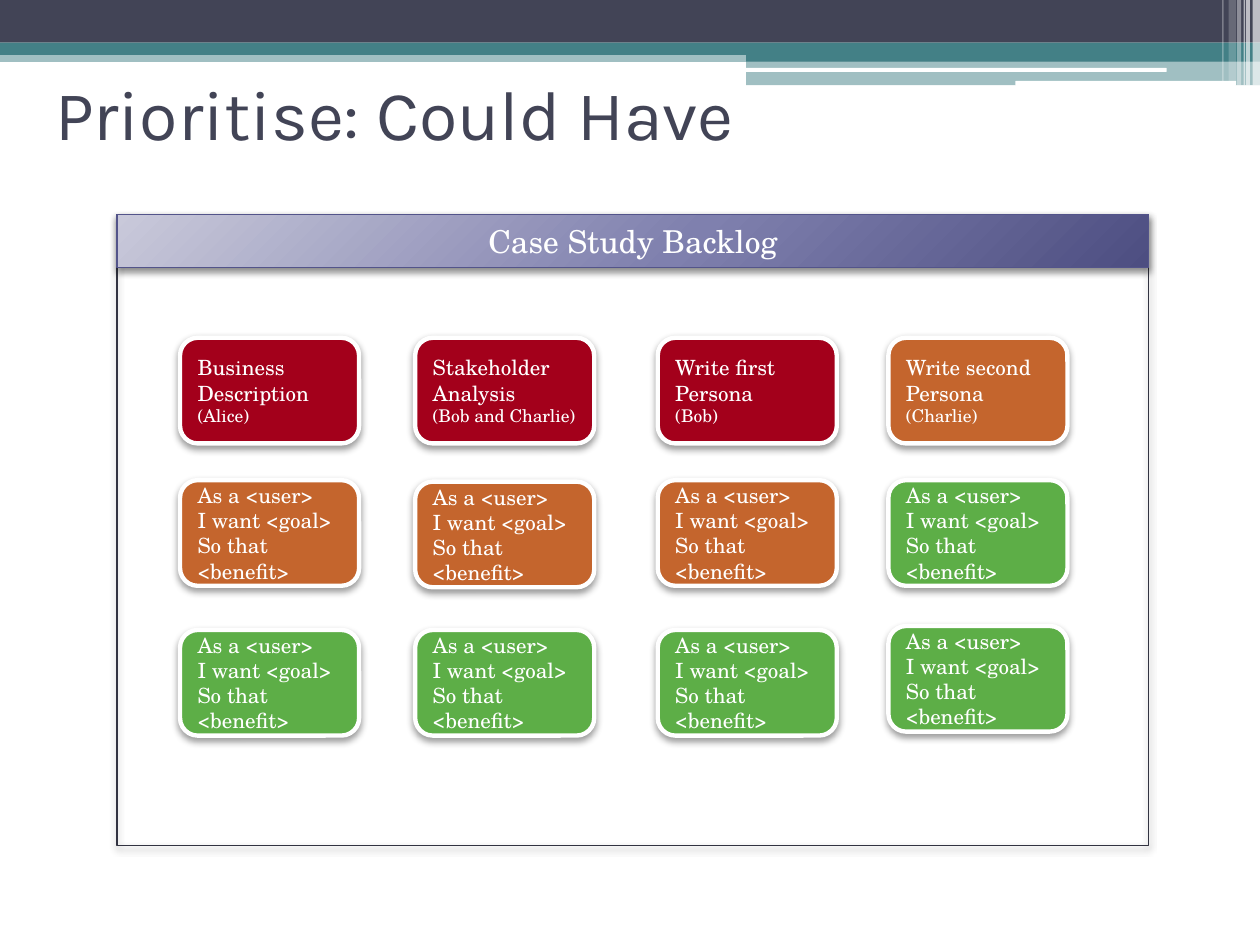
from lxml import etree
from pptx import Presentation
from pptx.dml.color import RGBColor
from pptx.enum.shapes import MSO_SHAPE as Shape
from pptx.enum.text import MSO_ANCHOR as Anchor, PP_ALIGN as Align
from pptx.oxml import parse_xml
from pptx.oxml.ns import nsdecls, qn
from pptx.util import Cm, Pt

WHITE = RGBColor(0xFF, 0xFF, 0xFF)
NAVY = RGBColor(0x42, 0x44, 0x56)
TEAL = RGBColor(0x43, 0x80, 0x86)
FRAME_LINE = RGBColor(0x32, 0x33, 0x41)
HEADER_LINE = RGBColor(0x53, 0x54, 0x8A)
RED = RGBColor(0xA3, 0x00, 0x1B)
ORANGE = RGBColor(0xC4, 0x65, 0x2D)
GREEN = RGBColor(0x5D, 0xAE, 0x47)
HEADER_STOPS = [
    (0, RGBColor(0xC9, 0xC9, 0xDA)),
    (55, RGBColor(0x7F, 0x80, 0xAE)),
    (100, RGBColor(0x4D, 0x4E, 0x81)),
]

TITLE_FONT = "Karla"
BODY_FONT = "TeX Gyre Schola"

BANDS = [
    (0, 1.02, 25.4, 0.23, TEAL, 50),
    (0, 0, 25.4, 0.86, NAVY, 100),
    (0, 0.86, 25.4, 0.25, TEAL, 100),
    (15.04, 0.99, 10.36, 0.25, TEAL, 100),
    (15.04, 1.22, 10.36, 0.5, TEAL, 50),
]
HIGHLIGHTS = [(15.01, 1.37, 8.51, 0.08), (20.47, 1.63, 4.45, 0.1)]
STRIPES = [
    (25.25, 0.15, 1.73, 65),
    (25.12, 0.08, 1.73, 65),
    (25.07, 0.03, 1.73, 60),
    (24.94, 0.08, 1.73, 40),
    (24.77, 0.15, 1.63, 20),
    (24.64, 0.03, 1.63, 30),
]

FRAME_LEFT, FRAME_TOP, FRAME_WIDTH = 2.36, 4.32, 20.8
CARD_WIDTH, CARD_HEIGHT = 3.61, 2.13
COLUMN_LEFTS = [3.63, 8.37, 13.26, 17.91]
ROW_TOPS = [6.81, 9.68, 12.7]
NUDGES = {(1, 1): 0.03, (2, 3): -0.08}
STORY = [("As a <user>", 12), ("I want <goal>", 12), ("So that <benefit>", 12)]


def task(name, owner):
    return [(name, 12), (f"({owner})", 10)]


CARDS = [
    [
        (RED, task("Business Description", "Alice")),
        (RED, task("Stakeholder Analysis", "Bob and Charlie")),
        (RED, task("Write first Persona", "Bob")),
        (ORANGE, task("Write second Persona", "Charlie")),
    ],
    [(color, STORY) for color in (ORANGE, ORANGE, ORANGE, GREEN)],
    [(GREEN, STORY)] * 4,
]


def add_box(slide, kind, left, top, width, height, fill=None, opacity=100):
    shape = slide.shapes.add_shape(kind, Cm(left), Cm(top), Cm(width), Cm(height))
    shape.shadow.inherit = False
    shape.line.fill.background()
    if fill is None:
        shape.fill.background()
    else:
        shape.fill.solid()
        shape.fill.fore_color.rgb = fill
    if opacity < 100:
        color = shape.fill._xPr.find(qn("a:solidFill"))[0]
        etree.SubElement(color, qn("a:alpha"), val=str(opacity * 1000))
    return shape


def set_outline(shape, color, width):
    shape.line.color.rgb = color
    shape.line.width = Pt(width)


def set_shadow(shape, blur, opacity):
    effects = shape._element.spPr.find(qn("a:effectLst"))
    effects.append(parse_xml(
        f'<a:outerShdw {nsdecls("a")} blurRad="{Pt(blur)}" dist="{Pt(2)}" '
        f'dir="5400000" rotWithShape="0"><a:srgbClr val="000000">'
        f'<a:alpha val="{opacity * 1000}"/></a:srgbClr></a:outerShdw>'
    ))


def set_radial_fill(shape, stops):
    stop_xml = "".join(
        f'<a:gs pos="{position * 1000}"><a:srgbClr val="{color}"/></a:gs>'
        for position, color in stops
    )
    gradient = parse_xml(
        f'<a:gradFill {nsdecls("a")} rotWithShape="1"><a:gsLst>{stop_xml}</a:gsLst>'
        '<a:path path="circle"><a:fillToRect l="-40000" t="-90000" '
        'r="140000" b="190000"/></a:path></a:gradFill>'
    )
    properties = shape._element.spPr
    properties.replace(properties.find(qn("a:noFill")), gradient)


def write_text(shape, lines, font, color, align=Align.LEFT):
    frame = shape.text_frame
    frame.word_wrap = True
    frame.vertical_anchor = Anchor.MIDDLE
    for index, (text, size) in enumerate(lines):
        paragraph = frame.add_paragraph() if index else frame.paragraphs[0]
        paragraph.text = text
        paragraph.alignment = align
        paragraph.font.name = font
        paragraph.font.size = Pt(size)
        paragraph.font.color.rgb = color


def add_banner(slide):
    for left, top, width, height, color, opacity in BANDS:
        add_box(slide, Shape.RECTANGLE, left, top, width, height, color, opacity)
    for bounds in HIGHLIGHTS:
        add_box(slide, Shape.ROUNDED_RECTANGLE, *bounds, WHITE)
    for left, width, height, opacity in STRIPES:
        add_box(slide, Shape.RECTANGLE, left, 0, width, height, WHITE, opacity)


def add_title(slide, text):
    title = slide.shapes.add_textbox(Cm(0.86), Cm(0.79), Cm(22.86), Cm(2.97))
    write_text(title, [(text, 40)], TITLE_FONT, NAVY)


def add_backlog_frame(slide, heading):
    for height, color in ((12.73, FRAME_LINE), (1.07, HEADER_LINE)):
        panel = add_box(slide, Shape.RECTANGLE, FRAME_LEFT, FRAME_TOP, FRAME_WIDTH, height)
        set_outline(panel, color, 0.75)
        set_shadow(panel, 4, 45)
    set_radial_fill(panel, HEADER_STOPS)
    write_text(panel, [(heading, 18)], BODY_FONT, WHITE, Align.CENTER)


def add_card(slide, left, top, color, lines):
    card = add_box(slide, Shape.ROUNDED_RECTANGLE, left, top, CARD_WIDTH, CARD_HEIGHT, color)
    set_outline(card, WHITE, 2.5)
    set_shadow(card, 4.1, 40)
    write_text(card, lines, BODY_FONT, WHITE)


def main():
    presentation = Presentation()
    presentation.slide_width = Cm(25.4)
    presentation.slide_height = Cm(19.05)
    slide = presentation.slides.add_slide(presentation.slide_layouts[6])
    add_banner(slide)
    add_title(slide, "Prioritise: Could Have")
    add_backlog_frame(slide, "Case Study Backlog")
    for row, (top, cards) in enumerate(zip(ROW_TOPS, CARDS)):
        for column, (left, (color, lines)) in enumerate(zip(COLUMN_LEFTS, cards)):
            add_card(slide, left, top + NUDGES.get((row, column), 0), color, lines)
    presentation.save("out.pptx")


if __name__ == "__main__":
    main()
